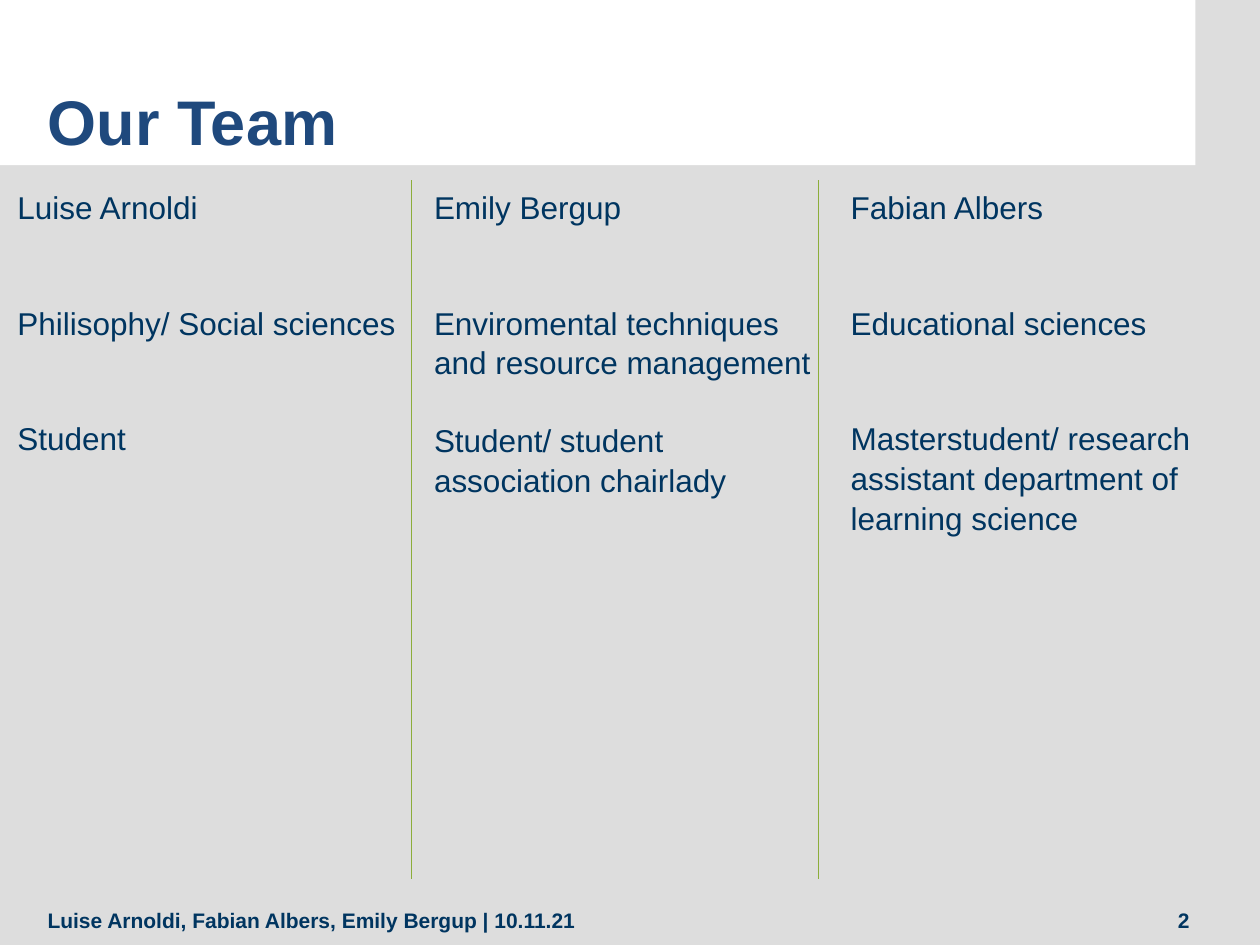
"""Builds the team slide: a title band, three member columns and a footer."""
from lxml.etree import SubElement
from pptx import Presentation
from pptx.dml.color import RGBColor
from pptx.enum.shapes import MSO_CONNECTOR, MSO_SHAPE
from pptx.enum.text import MSO_ANCHOR, MSO_AUTO_SIZE, PP_ALIGN
from pptx.oxml.ns import qn
from pptx.util import Cm, Pt

TITLE = "Our Team"
MEMBERS = [
    [("Luise Arnoldi", 1), ("Philisophy/ Social sciences", 1), ("Student", 1)],
    [("Emily Bergup", 1), ("Enviromental techniques and resource management", 2),
     ("Student/ student association chairlady", 2)],
    [("Fabian Albers", 1), ("Educational sciences", 1),
     ("Masterstudent/ research assistant department of learning science", 3)],
]
FOOTER = "Luise Arnoldi, Fabian Albers, Emily Bergup | 10.11.21"
PAGE_NUMBER = "2"

NAVY, BLUE, GREEN, GREY, WHITE = "003560", "1F497D", "8CAD3A", "DDDDDD", "FFFFFF"
COLUMN_LEFT, COLUMN_TOP, COLUMN_WIDTH, COLUMN_HEIGHT = 0.1, 3.63, 8.4, 7.2
DIVIDERS, DIVIDER_BOTTOM = (8.3, 16.5), 17.72
LINE_SPACING, LINE_POINTS, ROW_LINES = 1.05, 21.7, 3


def paint(target, color):
    target.solid()
    target.fore_color.rgb = RGBColor.from_string(color)


def write(para, text, size=18, color=NAVY, bold=False, align=PP_ALIGN.LEFT,
          before=0, spacing=1.0):
    para.alignment = align
    para.space_before = Pt(before)
    para.line_spacing = spacing
    span = para.add_run()
    span.text = text
    span.font.name = "Arial"
    span.font.size = Pt(size)
    span.font.bold = bold
    paint(span.font.fill, color)


def add_box(page, left, top, width, height, anchor=MSO_ANCHOR.TOP):
    box = page.shapes.add_textbox(Cm(left), Cm(top), Cm(width), Cm(height))
    box.text_frame.word_wrap = True
    box.text_frame.vertical_anchor = anchor
    return box.text_frame


def add_title(page):
    band = page.shapes.add_shape(MSO_SHAPE.RECTANGLE, 0, 0, Cm(24.1), Cm(3.33))
    band.shadow.inherit = False
    paint(band.fill, WHITE)
    band.line.fill.background()
    title = page.shapes.title
    title.element.addprevious(band.element)
    title.left, title.top, title.width, title.height = Cm(0.71), Cm(0.74), Cm(21.44), Cm(2.57)
    title.text_frame.vertical_anchor = MSO_ANCHOR.BOTTOM
    title.text_frame.auto_size = MSO_AUTO_SIZE.NONE
    write(title.text_frame.paragraphs[0], TITLE, size=36, color=BLUE, bold=True)


def add_member(page, column, rows):
    frame = add_box(page, COLUMN_LEFT + column * COLUMN_WIDTH, COLUMN_TOP,
                    COLUMN_WIDTH, COLUMN_HEIGHT)
    before = 0
    for index, (text, lines) in enumerate(rows):
        para = frame.add_paragraph() if index else frame.paragraphs[0]
        write(para, text, before=before, spacing=LINE_SPACING)
        before = (ROW_LINES - lines) * LINE_POINTS


def add_divider(page, x):
    line = page.shapes.add_connector(MSO_CONNECTOR.STRAIGHT, Cm(x), Cm(COLUMN_TOP),
                                     Cm(x), Cm(DIVIDER_BOTTOM))
    paint(line.line.fill, GREEN)
    line.line.width = Pt(0.75)
    SubElement(line.element.spPr, qn("a:effectLst"))


def main():
    deck = Presentation()
    deck.slide_width, deck.slide_height = Cm(25.4), Cm(19.05)
    page = deck.slides.add_slide(deck.slide_layouts[5])
    paint(page.background.fill, GREY)
    add_title(page)
    for column, rows in enumerate(MEMBERS):
        add_member(page, column, rows)
    for x in DIVIDERS:
        add_divider(page, x)
    for text, left, width, align in ((FOOTER, 0.71, 22, PP_ALIGN.LEFT),
                                     (PAGE_NUMBER, 22.71, 1.52, PP_ALIGN.RIGHT)):
        frame = add_box(page, left, 18.06, width, 0.99, MSO_ANCHOR.MIDDLE)
        write(frame.paragraphs[0], text, size=12, bold=True, align=align)
    deck.save("out.pptx")


if __name__ == "__main__":
    main()
